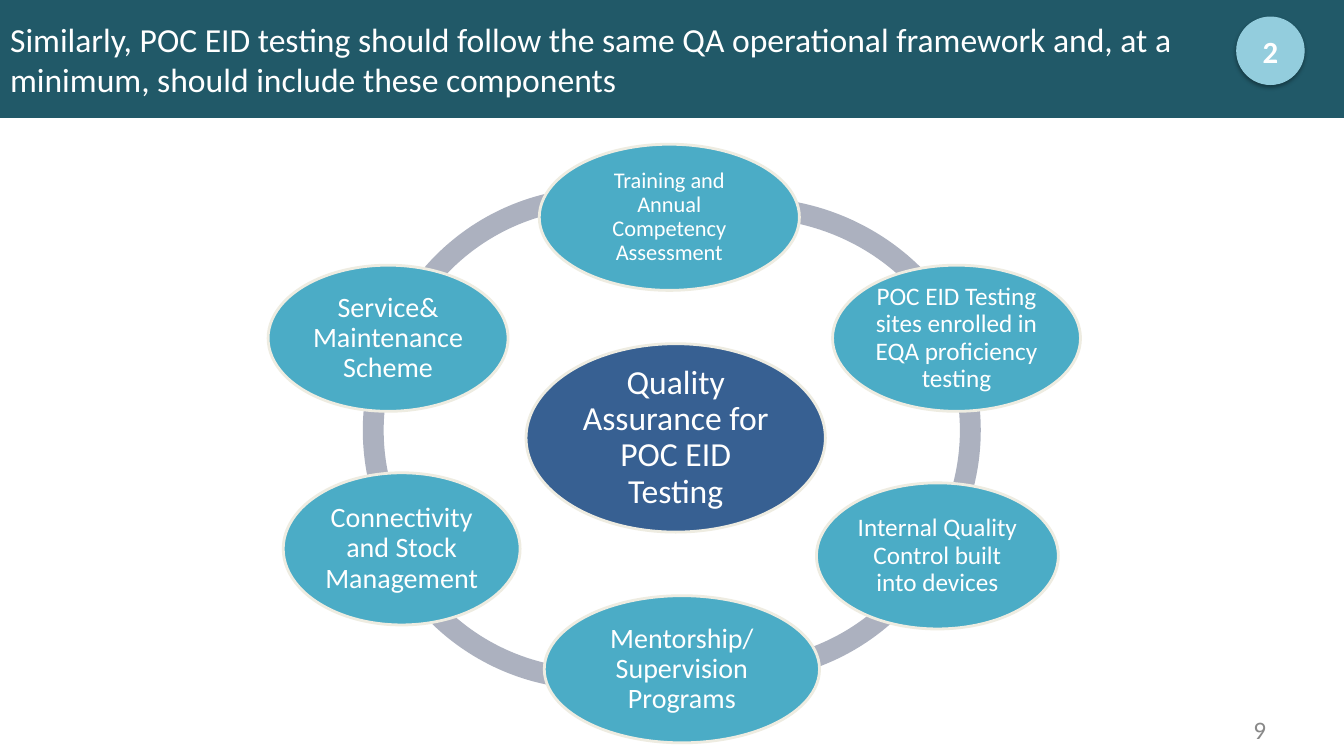
"""Build the slide on the quality assurance components of POC EID testing."""
from dataclasses import dataclass

from lxml import etree
from pptx import Presentation
from pptx.dml.color import RGBColor
from pptx.enum.shapes import MSO_SHAPE as SHAPE
from pptx.enum.text import MSO_ANCHOR as ANCHOR, PP_ALIGN as ALIGN
from pptx.util import Pt


@dataclass(frozen=True)
class Theme:
    """Colours, font and type sizes of the slide."""
    font: str = "Calibri"
    white: str = "FFFFFF"
    banner: str = "215968"
    ring: str = "ACB1BF"
    hub: str = "376092"
    component: str = "4BACC6"
    outline: str = "EEECE1"
    badge: str = "93CDDD"
    muted: str = "898989"
    title_size: int = 24
    hub_size: int = 24
    large: int = 20
    medium: int = 18
    small: int = 16
    badge_size: int = 22
    number_size: int = 18


T = Theme()

HUB = ("Quality Assurance for POC EID Testing", 375.8, 245.5, 213.8, 134.6)

COMPONENTS = [
    ("Training and Annual Competency Assessment", 385.2, 103, 185.8, 104.4, T.small),
    ("POC EID Testing sites enrolled in EQA proficiency testing",
     594.7, 189.4, 177.1, 104.4, T.medium),
    ("Internal Quality Control built into devices", 583.2, 344.9, 172.8, 104.4, T.medium),
    ("Mentorship/ Supervision Programs", 388.8, 425.5, 196.6, 105.1, T.large),
    ("Connectivity and Stock Management", 202.3, 337.7, 169.2, 108.7, T.large),
    ("Service& Maintenance Scheme", 191.5, 189.4, 171.4, 104.4, T.large),
]

RING_ARCS = [
    (262.8, 133.9, 331.2, 122.61, 173.53),
    (259.2, 141.8, 331.2, 89.11, 122.55),
    (258.5, 161.3, 331.2, 42.46, 93.28),
    (361.4, 155.5, 331.2, 16.83, 62.53),
    (369.4, 141.8, 331.2, 201.57, 20.22),
    (364.3, 141.1, 342, 149.61, 201.72),
]
ARC_HEIGHT = 331.2
ARC_THICKNESS = 0.045


def rgb(color):
    """Return a colour object for a hex string."""
    return RGBColor.from_string(color)


def write(tf, text, *, size, color=T.white, align=ALIGN.CENTER, bold=False,
          spacing=None, inset=None):
    """Write one formatted paragraph into a text frame."""
    tf.word_wrap = True
    tf.vertical_anchor = ANCHOR.MIDDLE
    if inset is not None:
        tf.margin_left = tf.margin_right = tf.margin_top = tf.margin_bottom = Pt(inset)
    p = tf.paragraphs[0]
    p.text = text
    p.alignment = align
    p.line_spacing = spacing
    for r in p.runs:
        r.font.name = T.font
        r.font.size = Pt(size)
        r.font.bold = bold
        r.font.color.rgb = rgb(color)


def add_filled(s, kind, x, y, w, h, fill, line=None, line_width=2):
    """Add a flat preset shape with an optional outline."""
    sp = s.shapes.add_shape(kind, Pt(x), Pt(y), Pt(w), Pt(h))
    sp.shadow.inherit = False
    sp.fill.solid()
    sp.fill.fore_color.rgb = rgb(fill)
    if line:
        sp.line.color.rgb = rgb(line)
        sp.line.width = Pt(line_width)
    else:
        sp.line.fill.background()
    return sp


def add_title(s, text):
    """Turn the title placeholder into the full-width banner."""
    sp = s.shapes.title
    sp.left, sp.top, sp.width, sp.height = Pt(0), Pt(0), Pt(960), Pt(84.2)
    sp.fill.solid()
    sp.fill.fore_color.rgb = rgb(T.banner)
    write(sp.text_frame, text, size=T.title_size, align=ALIGN.LEFT)


def add_arc(s, x, y, w, start, end):
    """Add one segment of the ring."""
    sp = add_filled(s, SHAPE.BLOCK_ARC, x, y, w, ARC_HEIGHT, T.ring)
    for i, value in enumerate((start, end, ARC_THICKNESS)):
        sp.adjustments[i] = value


def add_bubble(s, text, x, y, w, h, size, fill=T.component):
    """Add an outlined ellipse with its label."""
    sp = add_filled(s, SHAPE.OVAL, x, y, w, h, fill, T.outline)
    write(sp.text_frame, text, size=size, spacing=0.9, inset=2)


def add_shadow(sp, color="000000", opacity=35, blur=3.1, distance=1.8):
    """Give a shape a soft shadow straight below it."""
    effects = sp._element.spPr.find("{*}effectLst")
    ns = etree.QName(effects).namespace
    shadow = etree.SubElement(
        effects, f"{{{ns}}}outerShdw", blurRad=str(Pt(blur)), dist=str(Pt(distance)),
        dir=str(90 * 60000), rotWithShape="0")
    clr = etree.SubElement(shadow, f"{{{ns}}}srgbClr", val=color)
    etree.SubElement(clr, f"{{{ns}}}alpha", val=str(opacity * 1000))


def add_badge(s, text):
    """Add the round section badge on the banner."""
    sp = add_filled(s, SHAPE.OVAL, 883.4, 12.2, 48.2, 48.2, T.badge, T.badge, 0.75)
    add_shadow(sp)
    write(sp.text_frame, text, size=T.badge_size, bold=True)


def add_number(s, text):
    """Add the slide number at the bottom right."""
    tb = s.shapes.add_textbox(Pt(687.6), Pt(502.6), Pt(223.9), Pt(37.4))
    write(tb.text_frame, text, size=T.number_size, color=T.muted, align=ALIGN.RIGHT)


def main():
    """Build and save the slide."""
    prs = Presentation()
    prs.slide_width, prs.slide_height = Pt(960), Pt(540)
    s = prs.slides.add_slide(prs.slide_layouts[5])
    add_title(s, "Similarly, POC EID testing should follow the same QA operational "
                 "framework and, at a \vminimum, should include these components")
    add_number(s, "9")
    for arc in RING_ARCS:
        add_arc(s, *arc)
    add_bubble(s, *HUB, T.hub_size, fill=T.hub)
    for component in COMPONENTS:
        add_bubble(s, *component)
    add_badge(s, "2")
    prs.save("out.pptx")


if __name__ == "__main__":
    main()
